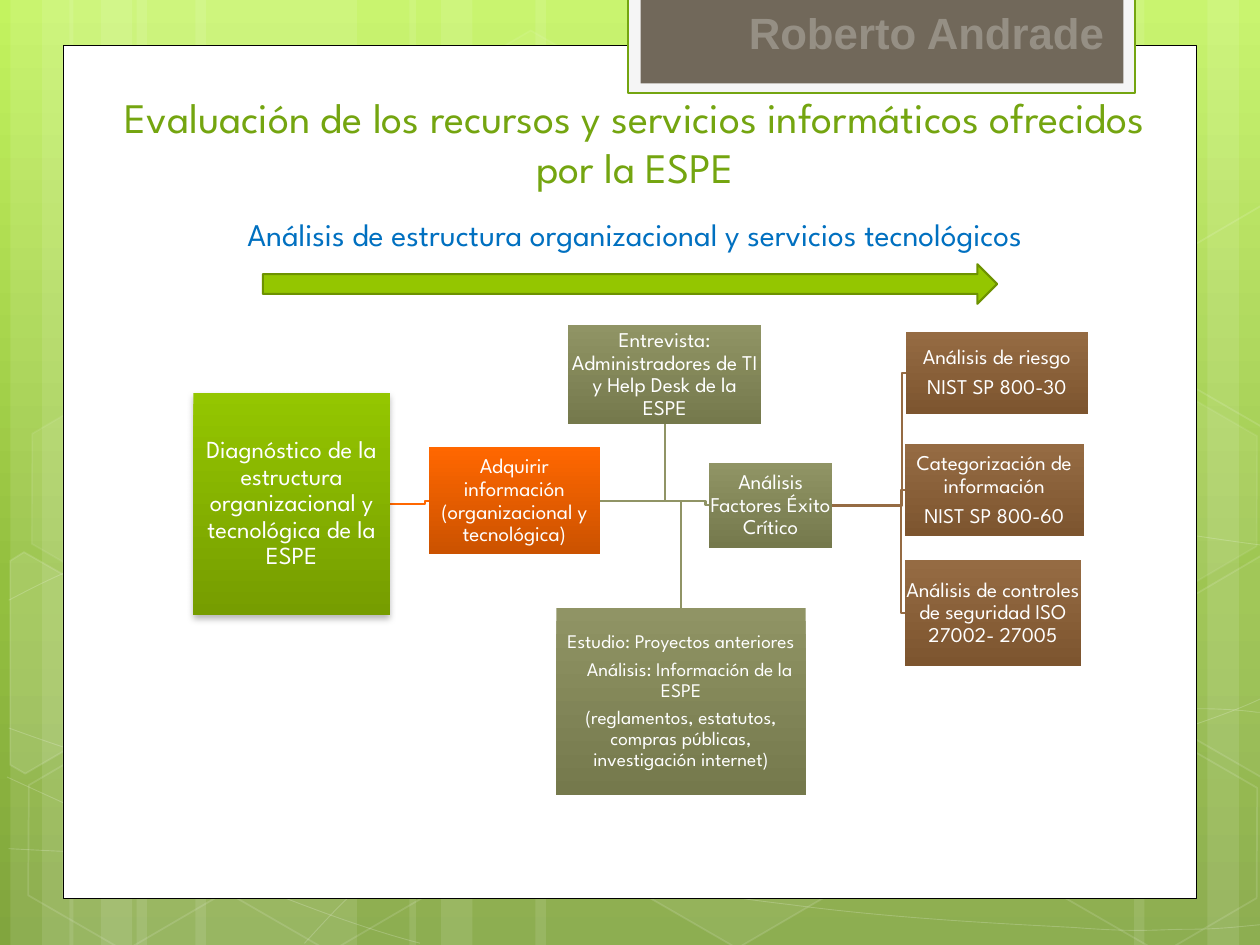
from copy import deepcopy
from math import cos, radians, sin

from lxml import etree
from pptx import Presentation
from pptx.dml.color import RGBColor
from pptx.enum.shapes import MSO_SHAPE
from pptx.enum.text import MSO_ANCHOR, MSO_AUTO_SIZE, PP_ALIGN
from pptx.oxml.ns import qn
from pptx.util import Pt

RECTANGLE, HEXAGON, RIGHT_ARROW = MSO_SHAPE.RECTANGLE, MSO_SHAPE.HEXAGON, MSO_SHAPE.RIGHT_ARROW
CENTER, RIGHT = PP_ALIGN.CENTER, PP_ALIGN.RIGHT
TOP, MIDDLE = MSO_ANCHOR.TOP, MSO_ANCHOR.MIDDLE
GROW = MSO_AUTO_SIZE.SHAPE_TO_FIT_TEXT

WHITE = RGBColor(0xFF, 0xFF, 0xFF)
BLACK = RGBColor(0, 0, 0)
PALE = RGBColor(0xF5, 0xF5, 0xF5)
TAUPE = RGBColor(0x71, 0x68, 0x5A)
TITLE_GREEN = RGBColor(0x74, 0xA5, 0x10)
BLUE = RGBColor(0x00, 0x70, 0xC0)
LIME, LIME_DARK = RGBColor(0x94, 0xC6, 0x00), RGBColor(0x76, 0x9D, 0x00)
ARROW_EDGE = RGBColor(0x6D, 0x92, 0x00)
ORANGE, ORANGE_DARK = RGBColor(0xFF, 0x67, 0x00), RGBColor(0xCB, 0x52, 0x00)
OLIVE, OLIVE_DARK = RGBColor(0x90, 0x94, 0x65), RGBColor(0x75, 0x79, 0x4C)
BROWN, BROWN_DARK = RGBColor(0x95, 0x6B, 0x43), RGBColor(0x7D, 0x55, 0x2F)
BACKGROUND = [(0, RGBColor(0xC3, 0xF3, 0x5F)), (0.62, RGBColor(0x93, 0xBF, 0x3F)),
              (1, RGBColor(0x81, 0xA5, 0x3E))]
FONT = "League Spartan"

AUTHOR = "Roberto Andrade"
TITLE = "Evaluación de los recursos y servicios informáticos ofrecidos por la ESPE"
SUBTITLE = "Análisis de estructura organizacional y servicios tecnológicos"

# key: (left, top, width, height), (light, dark), text size, paragraphs
BOXES = {
    "diagnostico": ((110.5, 224.6, 112.3, 126.7), (LIME, LIME_DARK), 14,
                    ["Diagnóstico de la estructura organizacional y tecnológica de la ESPE"]),
    "adquirir": ((245, 255.6, 97.9, 61.2), (ORANGE, ORANGE_DARK), 12,
                 ["Adquirir información (organizacional y tecnológica)"]),
    "factores": ((405.2, 264.3, 70.4, 49), (OLIVE, OLIVE_DARK), 12,
                 ["Análisis Factores Éxito Crítico"]),
    "riesgo": ((517.6, 189.7, 104.2, 46.8), (BROWN, BROWN_DARK), 12,
               ["Análisis de riesgo", "NIST SP 800-30"]),
    "categorizacion": ((517, 253.8, 102.4, 52.6), (BROWN, BROWN_DARK), 12,
                       ["Categorización de información", "NIST SP 800-60"]),
    "controles": ((517, 320, 100.8, 60.5), (BROWN, BROWN_DARK), 12,
                  ["Análisis de controles de seguridad ISO 27002- 27005"]),
    "entrevista": ((324.7, 185.8, 110.3, 56.6), (OLIVE, OLIVE_DARK), 12,
                   ["Entrevista: Administradores de TI y Help Desk de la ESPE"]),
    "estudio": ((318, 347.2, 142.4, 107), (OLIVE, OLIVE_DARK), 11,
                ["Estudio: Proyectos anteriores", "Análisis: Información de la ESPE",
                 "(reglamentos, estatutos, compras públicas, investigación internet)"]),
}
STEPS = [("adquirir", "factores"), ("diagnostico", "adquirir"), ("factores", "controles"),
         ("factores", "categorizacion"), ("factores", "riesgo")]
BRANCHES = [("adquirir", "estudio"), ("adquirir", "entrevista")]
ELBOW_GAP = 2

# left, width
BANDS = [(78, 126), (6, 36), (24, 60), (111.6, 126), (39.6, 36), (57.6, 60),
         (528, 126), (690, 36), (648, 60), (306, 222), (234, 36), (252, 60)]
# a start point, then three points for each Bézier section
CURVES = [
    [(5, 485), (44, 487), (83, 489), (137, 488), (191, 487), (258, 486), (330, 479),
     (402, 472), (504, 458), (570, 444), (636, 431), (703, 409), (725, 397)],
    [(5, 343), (26, 332), (47, 321), (87, 310), (128, 300), (186, 284), (250, 279),
     (314, 274), (392, 273), (471, 279), (550, 284), (682, 307), (725, 312)],
    [(4, 444), (91, 484), (178, 523), (240, 539)],
    [(5, 416), (27, 424), (50, 432), (92, 444), (134, 454), (197, 472), (257, 485),
     (317, 497), (392, 510), (452, 517), (512, 525), (576, 528), (614, 530),
     (652, 533), (662, 531), (680, 531), (699, 531), (712, 529), (725, 528)],
    [(174, 539), (187, 525), (200, 510), (217, 498), (235, 485), (259, 470), (279, 460),
     (300, 450), (312, 446), (338, 438), (364, 431), (413, 421), (438, 416),
     (464, 411), (467, 411), (490, 410), (512, 408), (547, 405), (572, 405),
     (597, 404), (638, 405), (638, 405), (654, 405), (670, 405), (686, 405),
     (699, 405), (711, 406), (718, 407), (724, 407), (722, 407), (724, 408)],
]
# left, top, fill opacity, line opacity
HEXAGONS = [(240.5, 26, 4, 8), (358, 424, 6, 12), (8, 425.5, 0, 12), (10, 224.6, 7, 8),
            (125.3, 426, 0, 12), (542, 326, 10, 12), (600.5, 427, 0, 12), (600.5, 226, 7, 8)]
# points, centre of the tilted frame, fill opacity
CUT_HEXAGONS = [
    ([(5.8, 320.4), (13.7, 315.4), (69.1, 347), (68.4, 410.4), (14.4, 442), (5.8, 437)],
     (25.9, 385.2), 10),
    ([(666.7, 349.2), (720.7, 317.5), (726.5, 321.1), (726.5, 441.4), (721.4, 444.2),
      (666.7, 412.6)], (709.2, 374.4), 4),
    ([(666.7, 149), (720.7, 117.4), (727.2, 121), (726.5, 241.2), (721.4, 244.1),
      (666.7, 212.4)], (709.2, 173.5), 0),
]
TILT = 30


def set_alpha(parent, percent):
    color = parent.find(qn("a:solidFill") + "/" + qn("a:srgbClr"))
    etree.SubElement(color, qn("a:alpha")).set("val", str(percent * 1000))


def paint(shape, fill=None, line=None, width=1.25, fill_alpha=100, line_alpha=100):
    shape.shadow.inherit = False
    if fill is None or fill_alpha == 0:
        shape.fill.background()
    else:
        shape.fill.solid()
        shape.fill.fore_color.rgb = fill
        if fill_alpha < 100:
            set_alpha(shape._element.spPr, fill_alpha)
    if line is None:
        shape.line.fill.background()
    else:
        shape.line.color.rgb = line
        shape.line.width = Pt(width)
        if line_alpha < 100:
            set_alpha(shape._element.spPr.find(qn("a:ln")), line_alpha)
    return shape


def add_preset(kind, area, **look):
    return paint(slide.shapes.add_shape(kind, *map(Pt, area)), **look)


def add_path(points, close=False, **look):
    start, *rest = [(Pt(x), Pt(y)) for x, y in points]
    builder = slide.shapes.build_freeform(*start)
    builder.add_line_segments(rest, close=close)
    return paint(builder.convert_to_shape(), **look)


def bend(shape):
    """Turn every three straight segments into one Bézier section."""
    outline = shape._element.find(".//" + qn("a:path"))
    segments = outline.findall(qn("a:lnTo"))
    for i in range(0, len(segments), 3):
        section = etree.SubElement(outline, qn("a:cubicBezTo"))
        for segment in segments[i:i + 3]:
            section.append(segment[0])
            outline.remove(segment)


def turn(point, center, degrees):
    dx, dy = point[0] - center[0], point[1] - center[1]
    c, s = cos(radians(degrees)), sin(radians(degrees))
    return center[0] + dx * c - dy * s, center[1] + dx * s + dy * c


def set_gradient(fill, light, dark):
    fill.gradient()
    fill.gradient_angle = 270
    for stop, color in zip(fill.gradient_stops, (light, dark)):
        stop.color.rgb = color


def write(shape, paragraphs, size, color, align=CENTER, anchor=TOP, font=FONT, bold=False):
    frame = shape.text_frame
    frame.text = "\n".join(paragraphs)
    frame.word_wrap = True
    frame.vertical_anchor = anchor
    for paragraph in frame.paragraphs:
        paragraph.alignment = align
        for run in paragraph.runs:
            run.font.name, run.font.size, run.font.bold = font, Pt(size), bold
            run.font.color.rgb = color
    return frame


def add_box(area, colors, size, paragraphs):
    box = add_preset(RECTANGLE, area)
    set_gradient(box.fill, *colors)
    frame = write(box, paragraphs, size, WHITE, anchor=MIDDLE)
    frame.margin_left = frame.margin_right = frame.margin_top = frame.margin_bottom = Pt(0.7)
    for paragraph in frame.paragraphs:
        paragraph.line_spacing = 0.9
        paragraph.space_after = Pt(round(size * 0.35, 1))
    return box


def right_middle(area):
    left, top, width, height = area
    return left + width, top + height / 2


presentation = Presentation()
presentation.slide_width, presentation.slide_height = Pt(720), Pt(540)
slide = presentation.slides.add_slide(presentation.slide_layouts[5])

# Background and decoration
background = slide.background.fill
set_gradient(background, BACKGROUND[0][1], BACKGROUND[-1][1])
stop_list = slide.element.find(".//" + qn("a:gsLst"))
stop_list.insert(1, deepcopy(stop_list[0]))
for stop, (position, color) in zip(background.gradient_stops, BACKGROUND):
    stop.position = position
    stop.color.rgb = color
for left, width in BANDS:
    add_preset(RECTANGLE, (left, 0, width, 540), fill=WHITE, fill_alpha=10)
for curve in CURVES:
    bend(add_path(curve, line=WHITE, width=0.5, line_alpha=20))
for left, top, fill_alpha, line_alpha in HEXAGONS:
    hexagon = add_preset(HEXAGON, (left, top, 126, 109.4), fill=WHITE, line=WHITE, width=1,
                         fill_alpha=fill_alpha, line_alpha=line_alpha)
    hexagon.adjustments[0] = 0.285
    hexagon.rotation = TILT
for points, center, fill_alpha in CUT_HEXAGONS:
    upright = [turn(point, center, -TILT) for point in points]
    add_path(upright, close=True, fill=WHITE, line=WHITE, width=1,
             fill_alpha=fill_alpha, line_alpha=12).rotation = TILT

# Panel, author tab and headings
add_preset(RECTANGLE, (36, 26, 648, 487.2), fill=WHITE, line=BLACK, width=0.5)
add_preset(RECTANGLE, (359.1, -1.4, 289.6, 54.7), fill=PALE, line=TITLE_GREEN)
add_preset(RECTANGLE, (366, -1.4, 276, 49), fill=TAUPE)
author = slide.shapes.add_textbox(*map(Pt, (371.5, 0, 266.4, 37.4)))
write(author, [AUTHOR], 25, WHITE, align=RIGHT, font="Arial", bold=True).auto_size = GROW
set_alpha(author.text_frame.paragraphs[0].runs[0].font._element, 25)

title = slide.shapes.title
title.left, title.top, title.width, title.height = map(Pt, (53.8, 48.6, 617.8, 65.5))
write(title, [TITLE], 24, TITLE_GREEN).auto_size = GROW
slide.shapes._spTree.append(title._element)  # in front of the panel
subtitle = slide.shapes.add_textbox(*map(Pt, (87.8, 119.2, 550, 29)))
write(subtitle, [SUBTITLE], 18, BLUE).auto_size = GROW

# Diagram
for source, target in BRANCHES:
    x, y = right_middle(BOXES[source][0])
    left, top, width, height = BOXES[target][0]
    middle = left + width / 2
    edge = top if top > y else top + height
    add_path([(x, y), (middle, y), (middle, edge)], line=BOXES[target][1][0])
for source, target in STEPS:
    x, y = right_middle(BOXES[source][0])
    left, end_y = BOXES[target][0][0], right_middle(BOXES[target][0])[1]
    elbow = left - ELBOW_GAP
    add_path([(x, y), (elbow, y), (elbow, end_y), (left, end_y)], line=BOXES[target][1][0])
boxes = {key: add_box(*box) for key, box in BOXES.items()}

analysis = boxes["estudio"].text_frame.paragraphs[1]
analysis._p.get_or_add_pPr().set("indent", str(Pt(10)))
effects = boxes["diagnostico"]._element.spPr.find(qn("a:effectLst"))
shadow = etree.SubElement(effects, qn("a:outerShdw"), blurRad=str(Pt(4)), dist=str(Pt(2)),
                          dir="5400000", rotWithShape="0")
shadow_color = etree.SubElement(shadow, qn("a:srgbClr"), val=str(BLACK))
etree.SubElement(shadow_color, qn("a:alpha"), val="28000")

add_preset(RIGHT_ARROW, (150.2, 151, 419.6, 22.6), fill=LIME, line=ARROW_EDGE)

presentation.save("out.pptx")
